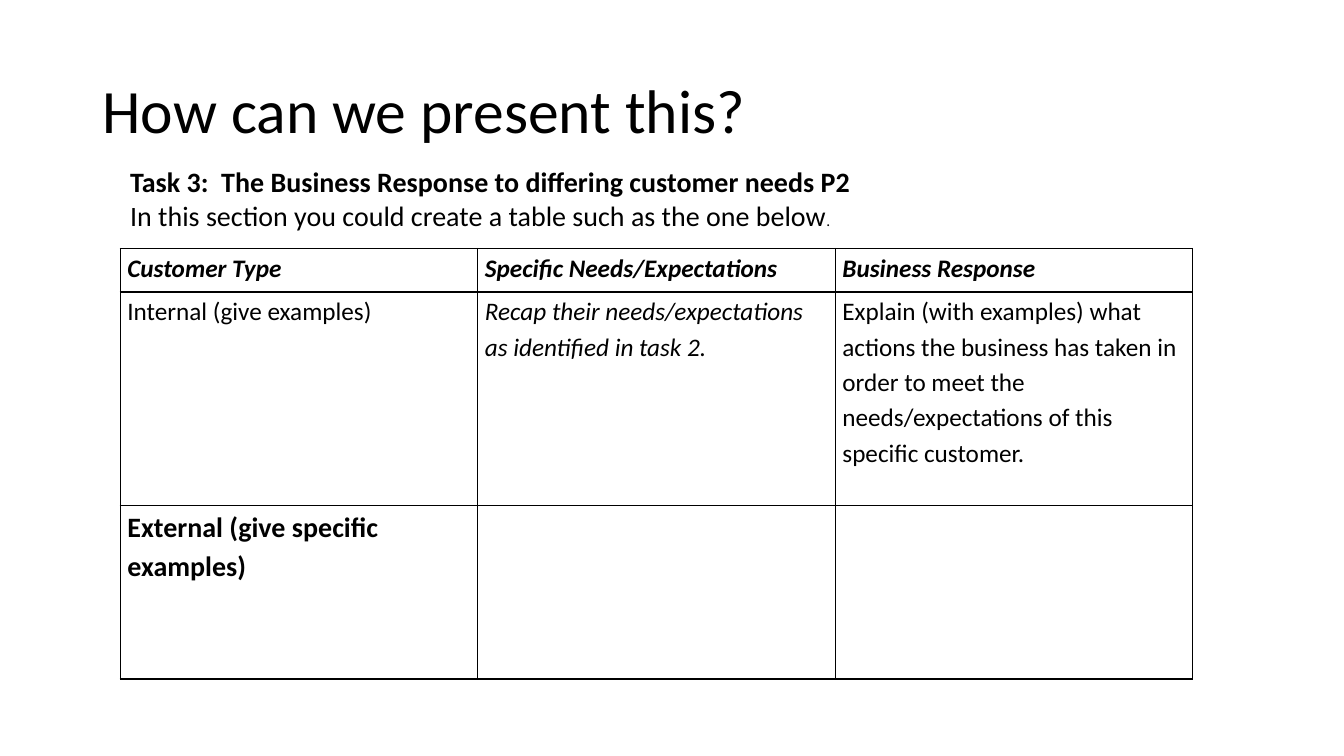
from lxml.etree import SubElement
from pptx import Presentation
from pptx.dml.color import RGBColor
from pptx.enum.text import MSO_ANCHOR, MSO_AUTO_SIZE, PP_ALIGN
from pptx.oxml.ns import qn
from pptx.util import Cm, Pt

BLACK = RGBColor(0, 0, 0)
WHITE = RGBColor(255, 255, 255)
FONT = "Calibri"


def add_run(para, text, size, bold=False, italic=False):
    run = para.add_run()
    run.text = text
    font = run.font
    font.name, font.size = FONT, Pt(size)
    font.bold, font.italic = bold, italic
    font.color.rgb = BLACK


def add_border(cell):
    props = cell._tc.get_or_add_tcPr()
    for pos, side in enumerate(("a:lnL", "a:lnR", "a:lnT", "a:lnB")):
        line = SubElement(props, qn(side), w=str(Pt(1)))
        fill = SubElement(line, qn("a:solidFill"))
        SubElement(fill, qn("a:srgbClr"), val=str(BLACK))
        props.insert(pos, line)


deck = Presentation()
deck.slide_width, deck.slide_height = Cm(33.87), Cm(19.05)
slide = deck.slides.add_slide(deck.slide_layouts[5])

# Title
title = slide.shapes.title
title.left, title.top = Cm(2.33), Cm(1.01)
title.width, title.height = Cm(29.21), Cm(3.68)
frame = title.text_frame
frame.vertical_anchor = MSO_ANCHOR.MIDDLE
para = frame.paragraphs[0]
para.alignment = PP_ALIGN.LEFT
para.line_spacing = 0.9
add_run(para, "How can we present this?", 44)

# Customer table: text, size, bold, italic
ROWS = [
    (1.1, [("Customer Type", 18, True, True),
           ("Specific Needs/Expectations", 18, True, True),
           ("Business Response", 18, True, True)]),
    (5.38, [("Internal (give examples)", 18, False, False),
            ("Recap their needs/expectations as identified in task 2.",
             18, False, True),
            ("Explain (with examples) what actions the business has taken "
             "in order to meet the needs/expectations of this specific "
             "customer.", 18, False, False)]),
    (4.37, [("External (give specific examples)", 20, True, False),
            None, None]),
]
table = slide.shapes.add_table(
    len(ROWS), 3, Cm(3.03), Cm(6.26), Cm(27.03), Cm(10.85)).table
for col in table.columns:
    col.width = Cm(9.01)
for row, (height, items) in zip(table.rows, ROWS):
    row.height = Cm(height)
    for cell, item in zip(row.cells, items):
        cell.fill.solid()
        cell.fill.fore_color.rgb = WHITE
        cell.margin_left = cell.margin_right = Cm(0.18)
        cell.margin_top = cell.margin_bottom = 0
        add_border(cell)
        if item:
            para = cell.text_frame.paragraphs[0]
            para.line_spacing = 1.15
            add_run(para, *item)

# Task text
box = slide.shapes.add_textbox(Cm(3.03), Cm(4.01), Cm(18.85), Cm(1.96))
frame = box.text_frame
frame.word_wrap = False
frame.auto_size = MSO_AUTO_SIZE.SHAPE_TO_FIT_TEXT
frame.vertical_anchor = MSO_ANCHOR.MIDDLE
add_run(frame.paragraphs[0],
        "Task 3:  The Business Response to differing customer needs P2",
        20, True)
para = frame.add_paragraph()
add_run(para, "In this section you could create a table such as the one below",
        20)
add_run(para, ".", 11)

deck.save("out.pptx")
